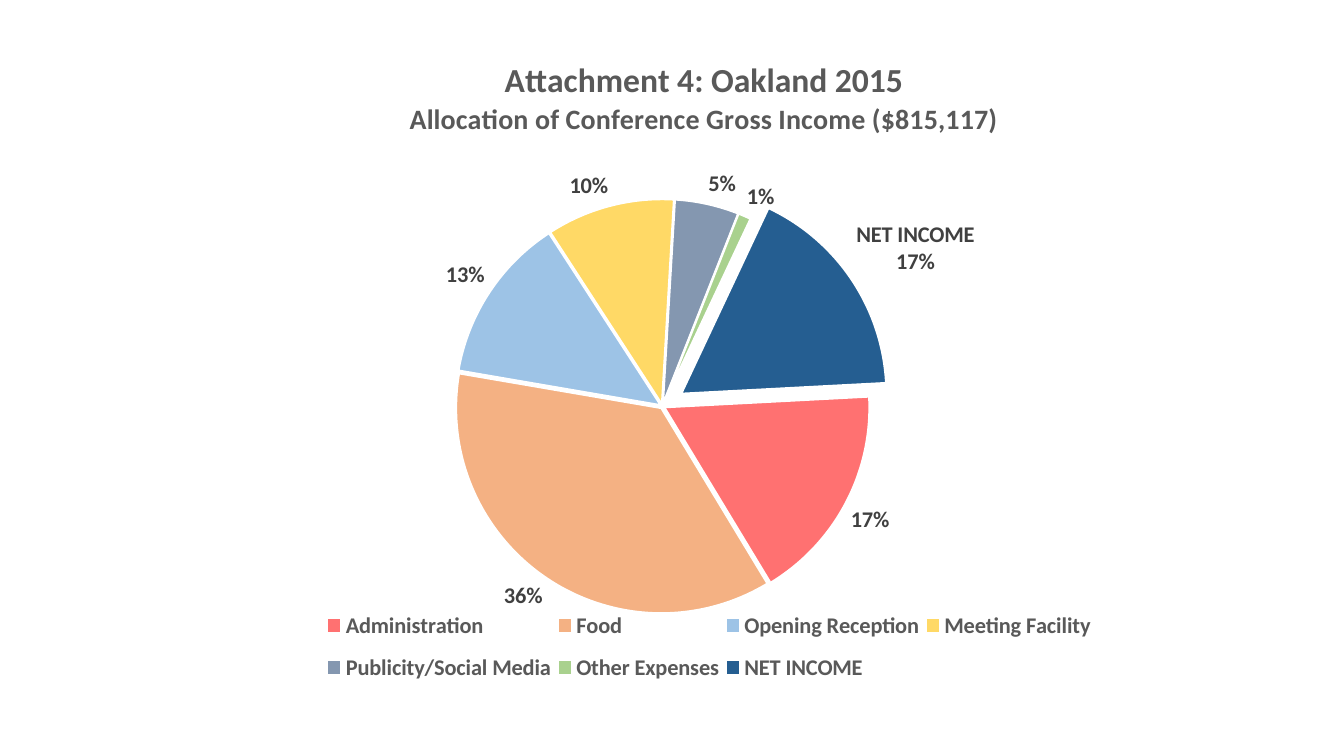
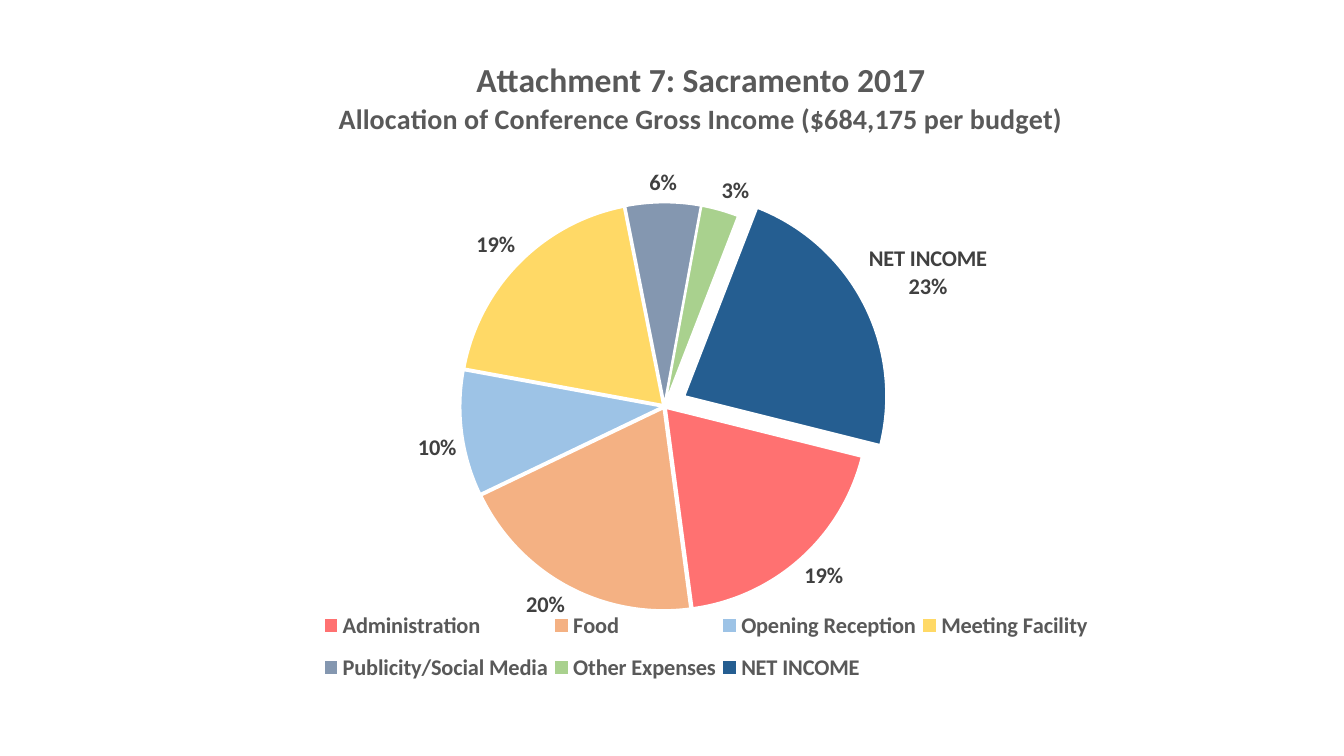
from lxml import etree
from pptx import Presentation, util as u
from pptx.chart.data import CategoryChartData
from pptx.dml.color import RGBColor
from pptx.enum import chart as ch
from pptx.oxml.ns import qn

PX = 9525
FONT = "Calibri"
GREY, LABEL, WHITE = "595959", "404040", "FFFFFF"
COLORS = {
    "Administration": "FF7171",
    "Food": "F4B183",
    "Opening Reception": "9DC3E6",
    "Meeting Facility": "FFD966",
    "Publicity/Social Media": "8497B0",
    "Other Expenses": "A9D18E",
    "NET INCOME": "255E91",
}
NET = len(COLORS) - 1
SLIDES = [
    (177, "Attachment 4: Oakland 2015",
     "Allocation of Conference Gross Income ($815,117)",
     87, (17, 36, 13, 10, 5, 1, 17), dict(x=0.26, y=0.24, w=0.4, h=0.64)),
    (174, "Attachment 7: Sacramento 2017",
     "Allocation of Conference Gross Income ($684,175 per budget)",
     104, (19, 20, 10, 19, 6, 3, 23), dict(x=0.26, y=0.25, w=0.41, h=0.62)),
]


def style(font, size, color):
    font.name, font.size, font.bold = FONT, u.Pt(size), True
    font.color.rgb = RGBColor.from_string(color)


def place(parent, index, **values):
    for old in parent.findall(qn("c:layout")):
        parent.remove(old)
    layout = etree.Element(qn("c:layout"))
    manual = etree.SubElement(layout, qn("c:manualLayout"))
    for tag, val in values.items():
        etree.SubElement(manual, qn("c:" + tag), val=str(val))
    parent.insert(index, layout)


prs = Presentation()
prs.slide_width, prs.slide_height = 1280 * PX, 720 * PX

for left, heading, subheading, start, shares, pie_area in SLIDES:
    s = prs.slides.add_slide(prs.slide_layouts[6])
    data = CategoryChartData()
    data.categories = list(COLORS)
    data.add_series("Series 1", shares)
    chart = s.shapes.add_chart(ch.XL_CHART_TYPE.PIE, left * PX, 36 * PX,
                               987 * PX, 627 * PX, data).chart
    chart.font.name, chart.font.size = FONT, u.Pt(10)

    tf = chart.chart_title.text_frame
    tf.text = heading
    style(tf.paragraphs[0].font, 24, GREY)
    p = tf.add_paragraph()
    p.text = subheading
    style(p.font, 20, GREY)

    chart.has_legend = True
    chart.legend.position = ch.XL_LEGEND_POSITION.BOTTOM
    chart.legend.include_in_layout = False
    style(chart.legend.font, 16, GREY)

    series = chart.plots[0].series[0]
    for i, color in enumerate(COLORS.values()):
        fmt = series.points[i].format
        fmt.fill.solid()
        fmt.fill.fore_color.rgb = RGBColor.from_string(color)
        fmt.line.color.rgb = RGBColor.from_string(WHITE)
        fmt.line.width = u.Pt(1.5)

    labels = series.data_labels
    labels.show_value, labels.show_percentage = False, True
    labels.number_format, labels.number_format_is_linked = "0%", False
    labels.position = ch.XL_LABEL_POSITION.OUTSIDE_END
    style(labels.font, 16, LABEL)
    net_label = series.points[NET].data_label
    style(net_label.font, 16, LABEL)
    net_label.position = ch.XL_LABEL_POSITION.OUTSIDE_END

    root = chart.element
    label = root.xpath(".//c:dLbl")[0]
    for tag, val in (("showVal", "0"), ("showCatName", "1"), ("showPercent", "1")):
        label.find(qn("c:" + tag)).set("val", val)
    separator = etree.Element(qn("c:separator"))
    separator.text = "\n"
    label.find(qn("c:showBubbleSize")).addnext(separator)

    points = root.xpath(".//c:dPt")
    points[0].addprevious(etree.Element(qn("c:explosion"), val="1"))
    for i, point in enumerate(points):
        offset = "11" if i == NET else "1"
        point.find(qn("c:spPr")).addprevious(etree.Element(qn("c:explosion"), val=offset))
    pie = root.xpath(".//c:pieChart")[0]
    for old in pie.findall(qn("c:firstSliceAng")):
        pie.remove(old)
    etree.SubElement(pie, qn("c:firstSliceAng"), val=str(start))

    place(root.xpath(".//c:plotArea")[0], 0, layoutTarget="inner", xMode="edge",
          yMode="edge", **pie_area)
    place(root.xpath(".//c:legend")[0], 1, xMode="edge", yMode="edge",
          x=0.13, y=0.85, w=0.75, h=0.15)

prs.save("out.pptx")
